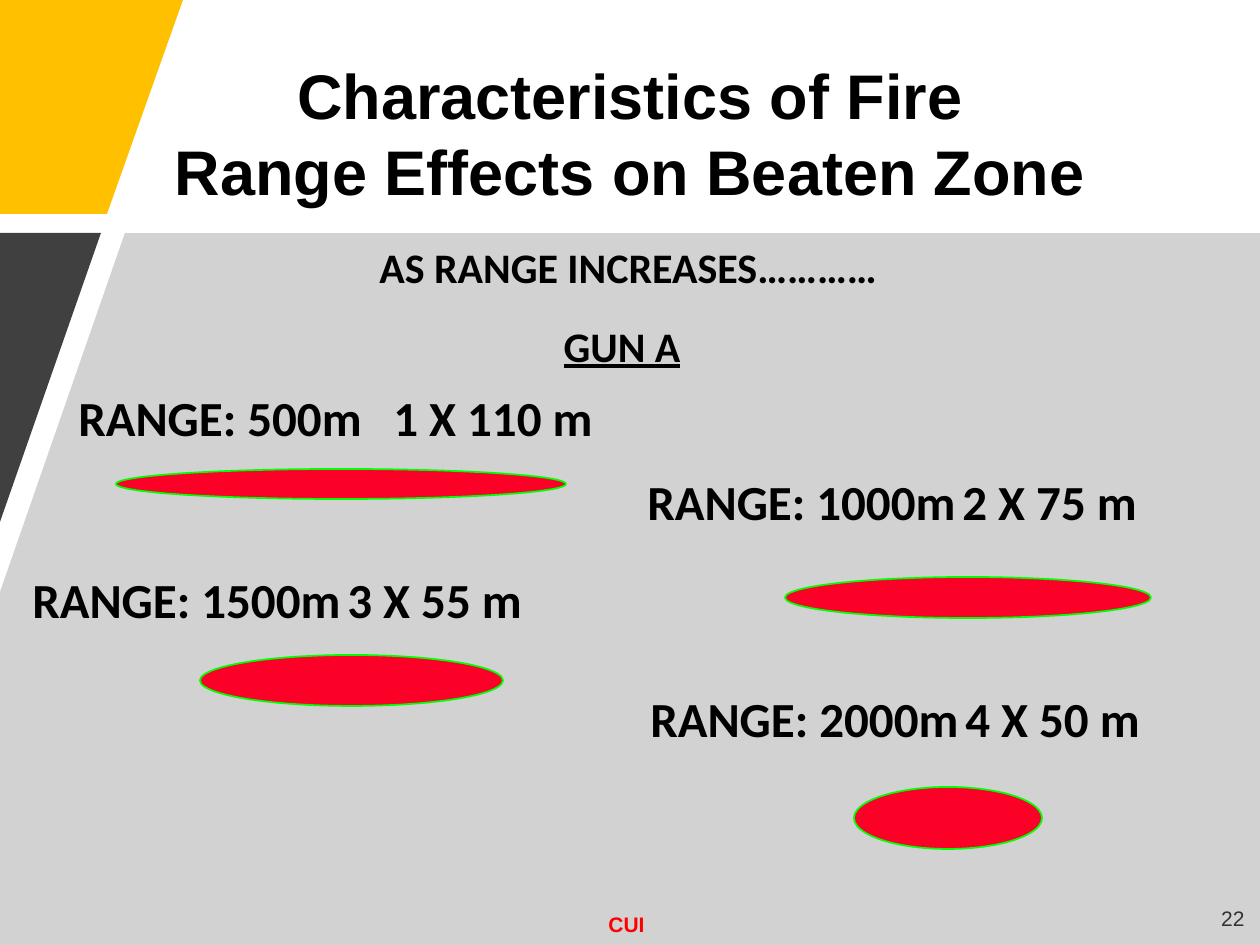
import pptx
import pptx.util
import pptx.dml.color
import pptx.enum.shapes
import pptx.enum.text
import lxml.etree

RGB = pptx.dml.color.RGBColor
ALIGN = pptx.enum.text.PP_ALIGN
ANCHOR = pptx.enum.text.MSO_ANCHOR

GOLD = RGB(0xFF, 0xC0, 0x00)
GRAY = RGB(0xD2, 0xD2, 0xD2)
DARK = RGB(0x40, 0x40, 0x40)
BLACK = RGB(0, 0, 0)
SOFT = RGB(0x33, 0x33, 0x33)
RED = RGB(0xFF, 0, 0)
ZONE = RGB(0xFC, 0x01, 0x28)
GREEN = RGB(0, 0xFF, 0)

WIDE, HIGH = 1260, 945
SCALE = pptx.util.Inches(10) / WIDE


def emu(*px):
    return [round(n * SCALE) for n in px]


class Deck:
    def __init__(self):
        self.prs = pptx.Presentation()
        self.prs.slide_width, self.prs.slide_height = emu(WIDE, HIGH)
        self.slide = self.prs.slides.add_slide(self.prs.slide_layouts[5])
        self.shapes = self.slide.shapes

    def style(self, para, size, name, color=BLACK, bold=True, under=None):
        font = para.font
        font.size, font.name = pptx.util.Pt(size), name
        font.bold, font.underline = bold, under
        font.color.rgb = color

    def title(self, box, lines):
        shape = self.shapes.title
        shape.left, shape.top, shape.width, shape.height = emu(*box)
        frame = shape.text_frame
        frame.auto_size = pptx.enum.text.MSO_AUTO_SIZE.NONE
        frame.vertical_anchor = ANCHOR.BOTTOM
        frame.text = "\n".join(lines)
        for para in frame.paragraphs:
            para.alignment = ALIGN.CENTER
            self.style(para, 36, "Arial")

    def text(self, box, words, size, name="Calibri", align=ALIGN.LEFT,
             anchor=ANCHOR.TOP, tab=None, **look):
        frame = self.shapes.add_textbox(*emu(*box)).text_frame
        frame.word_wrap = True
        frame.vertical_anchor = anchor
        para = frame.paragraphs[0]
        para.text = words
        para.alignment = align
        if tab:
            props = para._p.get_or_add_pPr()
            space = "{%s}" % props.nsmap["a"]
            stops = lxml.etree.SubElement(props, space + "tabLst")
            lxml.etree.SubElement(stops, space + "tab",
                                  pos=str(emu(tab)[0]), algn="l")
        self.style(para, size, name, **look)

    def panel(self, points, color):
        start, *rest = points
        form = self.shapes.build_freeform(*start, scale=SCALE)
        form.add_line_segments(rest, close=True)
        shape = form.convert_to_shape()
        shape.shadow.inherit = False
        shape.fill.solid()
        shape.fill.fore_color.rgb = color
        shape.line.fill.background()

    def oval(self, box):
        kind = pptx.enum.shapes.MSO_SHAPE.OVAL
        shape = self.shapes.add_shape(kind, *emu(*box))
        shape.shadow.inherit = False
        shape.fill.solid()
        shape.fill.fore_color.rgb = ZONE
        shape.line.color.rgb = GREEN
        shape.line.width = pptx.util.Pt(1)


def main():
    deck = Deck()
    deck.panel([(0, 0), (183, 0), (107, 214), (0, 214)], GOLD)
    deck.panel([(125, 233), (WIDE, 233), (WIDE, HIGH), (0, HIGH), (0, 592)],
               GRAY)
    deck.panel([(0, 233), (101, 233), (0, 522)], DARK)

    deck.title((0, 48, WIDE, 166),
               ["Characteristics of Fire", "Range Effects on Beaten Zone"])
    deck.text((367, 235, 527, 63), "AS RANGE INCREASES…………", 24)
    deck.text((542, 314, 160, 63), "GUN A", 24, align=ALIGN.CENTER,
              under=True)

    zones = [
        ("500m", "1 X 110 m", (66, 381), (116, 469, 450, 30)),
        ("1000m", "2 X 75 m", (635, 465), (785, 577, 366, 41)),
        ("1500m", "3 X 55 m", (20, 563), (200, 655, 303, 51)),
        ("2000m", "4 X 50 m", (638, 682), (854, 787, 188, 62)),
    ]
    for reach, area, (left, top), oval in zones:
        deck.text((left, top, 602, 71), f"RANGE: {reach}\t{area}", 28, tab=315)
        deck.oval(oval)

    deck.text((586, 905, 81, 38), "CUI", 12, "Arial", ALIGN.CENTER, color=RED)
    deck.text((1205, 893, 52, 50), "22", 12, "Arial", ALIGN.RIGHT,
              ANCHOR.MIDDLE, color=SOFT, bold=False)
    deck.prs.save("out.pptx")


if __name__ == "__main__":
    main()
